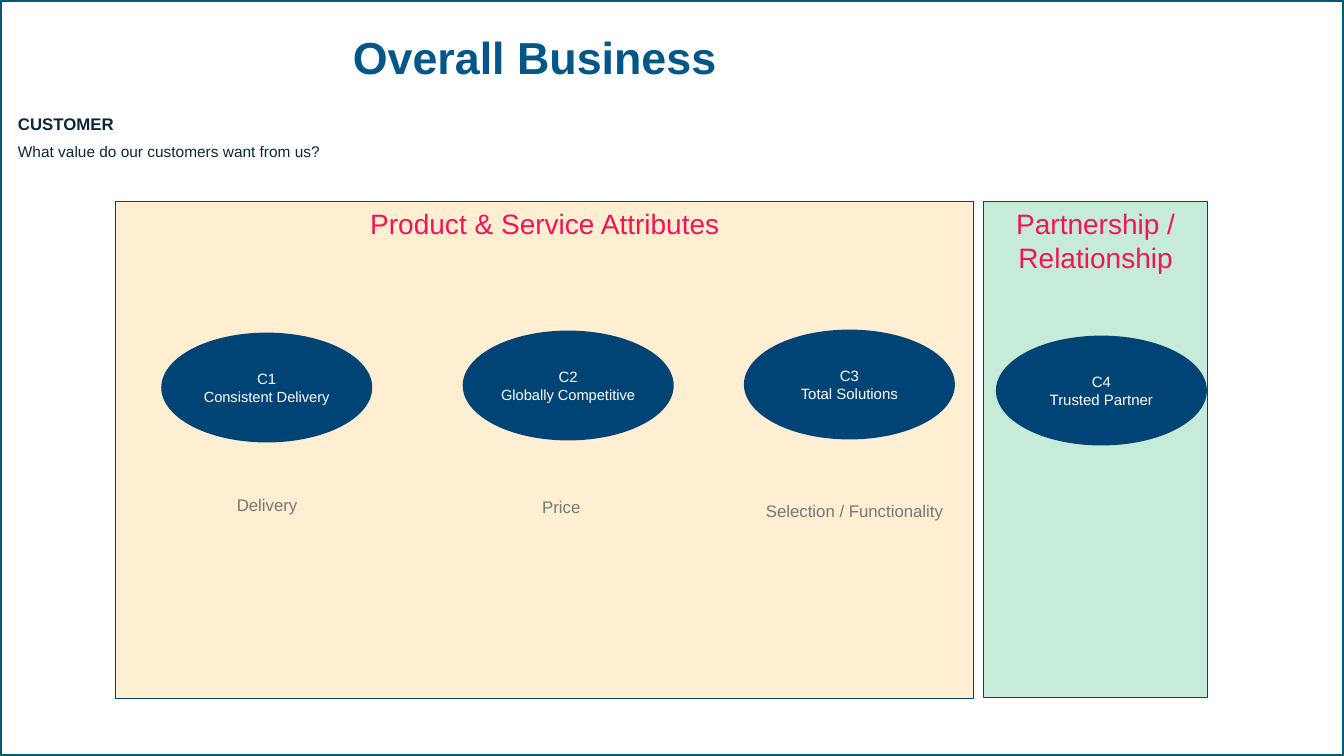
from pptx import Presentation
from pptx import util as u
from pptx.dml.color import RGBColor
from pptx.enum import shapes, text
from pptx.oxml.ns import qn
from lxml import etree

FRAME = RGBColor(0x02, 0x58, 0x77)
TITLE = RGBColor(0x02, 0x57, 0x88)
NAVY = RGBColor(0x00, 0x44, 0x75)
MINT = RGBColor(0xC7, 0xEB, 0xD9)
AMBER = RGBColor(0xFF, 0xAA, 0x1B)
PINK = RGBColor(0xF1, 0x16, 0x53)
GREY = RGBColor(0x76, 0x77, 0x79)
INK = RGBColor(0x09, 0x29, 0x39)
WHITE = RGBColor(0xFF, 0xFF, 0xFF)
CENTER = text.PP_ALIGN.CENTER
TOP = text.MSO_ANCHOR.TOP
MIDDLE = text.MSO_ANCHOR.MIDDLE


class Page:
    font_name = "Arial"

    def __init__(self, deck):
        self.deck = deck
        self.page = deck.slides.add_slide(deck.slide_layouts[5])

    def place(self, left, top, width, height):
        across, down = self.deck.slide_width, self.deck.slide_height
        return [int(share * side / 100) for share, side in
                zip((left, top, width, height), (across, down, across, down))]

    def set_text(self, box, lines, anchor=TOP, wrap=True, **layout):
        frame = box.text_frame
        settings = {"word_wrap": wrap, "vertical_anchor": anchor,
                    "auto_size": text.MSO_AUTO_SIZE.NONE}
        for name, value in settings.items():
            setattr(frame, name, value)
        for index, (words, size, color, bold) in enumerate(lines):
            para = frame.add_paragraph() if index else frame.paragraphs[0]
            for name, value in layout.items():
                if name != "space_before" or index:
                    setattr(para, name, value)
            span = para.add_run()
            span.text = words
            style = {"name": self.font_name, "size": u.Pt(size), "bold": bold}
            for name, value in style.items():
                setattr(span.font, name, value)
            span.font.color.rgb = color

    def title(self, area, words):
        box = self.page.shapes.title
        for name, value in zip(("left", "top", "width", "height"), self.place(*area)):
            setattr(box, name, value)
        self.set_text(box, [(words, 32, TITLE, True)], MIDDLE,
                      alignment=CENTER, line_spacing=0.9)

    def shape(self, kind, area, fill=None, line=None, weight=0.75, opacity=100):
        box = self.page.shapes.add_shape(kind, *self.place(*area))
        box.shadow.inherit = False
        if fill is None:
            box.fill.background()
        else:
            box.fill.solid()
            box.fill.fore_color.rgb = fill
        if opacity < 100:
            color = box.element.spPr.find(qn("a:solidFill"))[0]
            etree.SubElement(color, qn("a:alpha"), val=str(opacity * 1000))
        if line is None:
            box.line.fill.background()
        else:
            box.line.color.rgb = line
            box.line.width = u.Pt(weight)
        return box

    def frame(self):
        self.shape(shapes.MSO_SHAPE.RECTANGLE, (0, 0, 100, 100), line=FRAME, weight=3)

    def panel(self, area, heading, fill, opacity=100):
        box = self.shape(shapes.MSO_SHAPE.RECTANGLE, area, fill, NAVY, opacity=opacity)
        self.set_text(box, [(heading, 20, PINK, False)], alignment=CENTER)

    def goal(self, left, top, code, name, size):
        box = self.shape(shapes.MSO_SHAPE.OVAL, (left, top, 15.7, 14.53), NAVY)
        box.text_frame.margin_left = box.text_frame.margin_right = 0
        self.set_text(box, [(code, 10.7, WHITE, False), (name, size, WHITE, False)],
                      MIDDLE, alignment=CENTER)

    def note(self, area, lines, **layout):
        box = self.page.shapes.add_textbox(*self.place(*area))
        self.set_text(box, lines, **layout)


def main():
    deck = Presentation()
    deck.slide_width, deck.slide_height = u.Inches(13.33), u.Inches(7.5)
    page = Page(deck)
    page.frame()
    page.panel((73.2, 26.67, 16.65, 65.6), "Partnership / Relationship", MINT)
    page.panel((8.63, 26.67, 63.83, 65.73), "Product & Service Attributes", AMBER, 20)
    page.title((2.78, 3.73, 74.03, 8.53), "Overall Business")
    for goal in [
        (12, 44, "C1", "Consistent Delivery", 10.5),
        (34.43, 43.73, "C2", "Globally Competitive", 10.5),
        (55.35, 43.6, "C3", "Total Solutions", 10.7),
        (74.1, 44.4, "C4", "Trusted Partner", 10.7),
    ]:
        page.goal(*goal)
    for left, top, width, label in [
        (16.88, 64.8, 6.08, "Delivery"),
        (39.6, 65.07, 4.35, "Price"),
        (56.25, 65.6, 14.78, "Selection / Functionality"),
    ]:
        page.note((left, top, width, 4), [(label, 12, GREY, False)], wrap=False)
    page.note((0.6, 14.4, 44.55, 7.73),
              [("CUSTOMER", 12, INK, True),
               ("What value do our customers want from us?", 11, INK, False)],
              space_before=u.Pt(6))
    deck.save("out.pptx")


if __name__ == "__main__":
    main()
